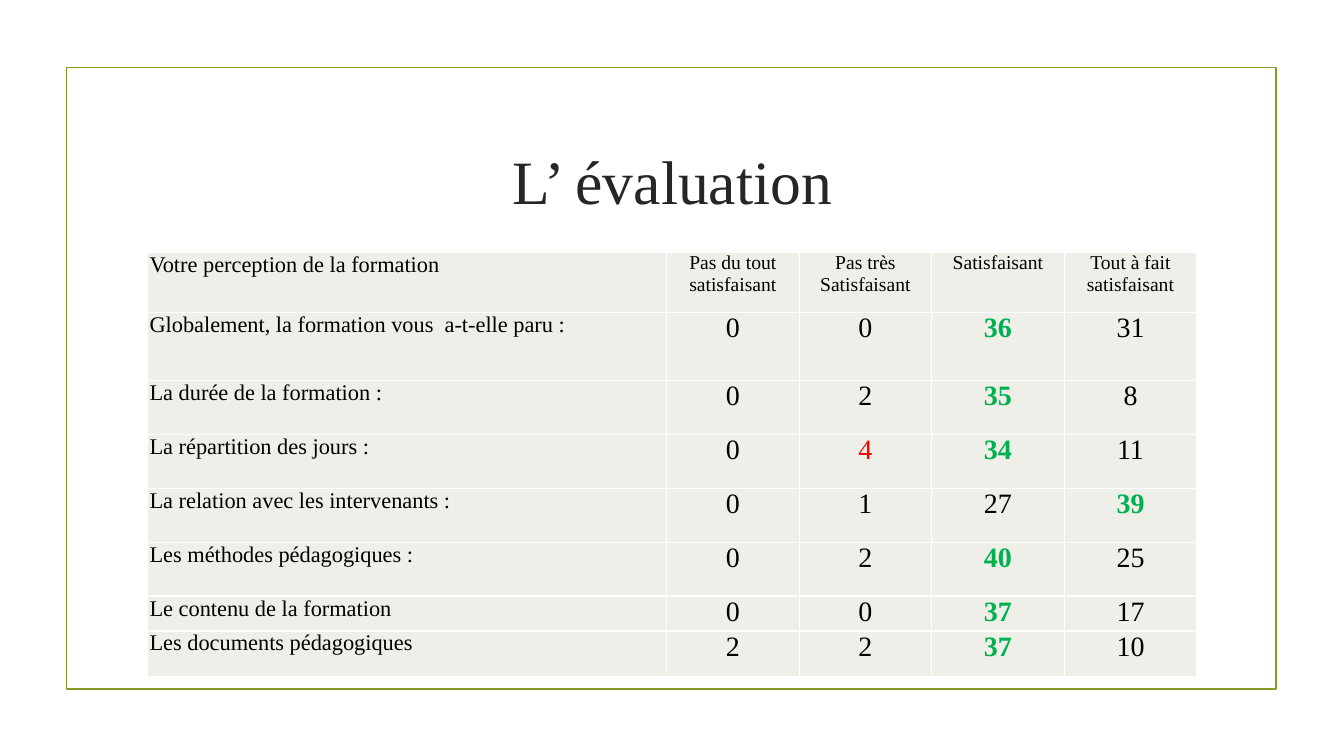
from lxml.etree import SubElement
from pptx import Presentation
from pptx.dml.color import RGBColor
from pptx.enum.shapes import MSO_SHAPE as Shape
from pptx.enum.text import MSO_ANCHOR as Anchor, PP_ALIGN as Align
from pptx.oxml.ns import qn
from pptx.util import Cm, Pt

TITLE = "L’ évaluation"
HEADINGS = ["Votre perception de la formation", "Pas du tout satisfaisant",
            "Pas très\nSatisfaisant", "Satisfaisant", "Tout à fait satisfaisant"]
# Question, row height in cm, number of answers for each heading
ANSWERS = [
    ("Globalement, la formation vous  a-t-elle paru :", 1.71, (0, 0, 36, 31)),
    ("La durée de la formation :", 1.36, (0, 2, 35, 8)),
    ("La répartition des jours :", 1.36, (0, 4, 34, 11)),
    ("La relation avec les intervenants :", 1.36, (0, 1, 27, 39)),
    ("Les méthodes pédagogiques :", 1.36, (0, 2, 40, 25)),
    ("Le contenu de la formation", 0.88, (0, 0, 37, 17)),
    ("Les documents pédagogiques", 1.14, (2, 2, 37, 10)),
]
HEADER_HEIGHT = 1.51
COLUMN_WIDTHS = [13.08] + [3.34] * 4

FONT = "Times New Roman"
OLIVE = RGBColor(0x83, 0x99, 0x2A)
CHARCOAL = RGBColor(0x26, 0x26, 0x26)
PALE = RGBColor(0xED, 0xEF, 0xE8)
BLACK = RGBColor(0, 0, 0)
GREEN = RGBColor(0x00, 0xB0, 0x50)
RED = RGBColor(0xFF, 0, 0)


def write(frame, text, size, color=BLACK, bold=False, align=Align.CENTER):
    frame.text = text
    for para in frame.paragraphs:
        para.alignment = align
        para.font.name = FONT
        para.font.size = Pt(size)
        para.font.bold = bold
        para.font.color.rgb = color


def style_cell(cell):
    """Give a cell thin white borders, a pale fill and narrow margins."""
    properties = cell._tc.get_or_add_tcPr()
    for side in "LRTB":
        border = SubElement(properties, qn(f"a:ln{side}"), w=str(Pt(1)))
        fill = SubElement(border, qn("a:solidFill"))
        SubElement(fill, qn("a:srgbClr"), val="FFFFFF")
    cell.fill.solid()
    cell.fill.fore_color.rgb = PALE
    cell.margin_left = cell.margin_right = Cm(0.05)
    cell.margin_top = cell.margin_bottom = 0


def add_frame(page):
    frame = page.shapes.add_shape(Shape.RECTANGLE, Cm(1.68), Cm(1.7), Cm(30.48), Cm(15.67))
    frame.shadow.inherit = False
    frame.fill.background()
    frame.line.color.rgb = OLIVE
    frame.line.width = Pt(1.25)


def add_title(page):
    title = page.shapes.title
    title.left, title.top, title.width, title.height = Cm(3.61), Cm(2.72), Cm(26.67), Cm(3.63)
    title.text_frame.vertical_anchor = Anchor.MIDDLE
    write(title.text_frame, TITLE, size=44, color=CHARCOAL)


def add_answers(page):
    heights = [HEADER_HEIGHT] + [height for _, height, _ in ANSWERS]
    table = page.shapes.add_table(len(heights), len(COLUMN_WIDTHS), Cm(3.72), Cm(6.36),
                                  Cm(sum(COLUMN_WIDTHS)), Cm(sum(heights))).table
    table.first_row = table.horz_banding = False
    for column, width in zip(table.columns, COLUMN_WIDTHS):
        column.width = Cm(width)
    for row, height in zip(table.rows, heights):
        row.height = Cm(height)
    for cell in table.iter_cells():
        style_cell(cell)

    for column, heading in enumerate(HEADINGS):
        if column:
            write(table.cell(0, column).text_frame, heading, size=14)
        else:
            write(table.cell(0, 0).text_frame, heading, size=16, align=Align.LEFT)

    # Green marks the top answer of a row, red the highest unfavourable count
    worst = max(max(counts[:2]) for _, _, counts in ANSWERS)
    for row, (question, _, counts) in enumerate(ANSWERS, start=1):
        write(table.cell(row, 0).text_frame, question, size=16, align=Align.LEFT)
        for column, count in enumerate(counts, start=1):
            best = count == max(counts)
            unfavourable = column <= 2 and count == worst
            color = GREEN if best else RED if unfavourable else BLACK
            write(table.cell(row, column).text_frame, str(count), size=20, color=color, bold=best)


def main():
    deck = Presentation()
    deck.slide_width, deck.slide_height = Cm(33.87), Cm(19.05)
    page = deck.slides.add_slide(deck.slide_layouts[5])
    add_frame(page)
    add_title(page)
    add_answers(page)
    deck.save("out.pptx")


if __name__ == "__main__":
    main()
